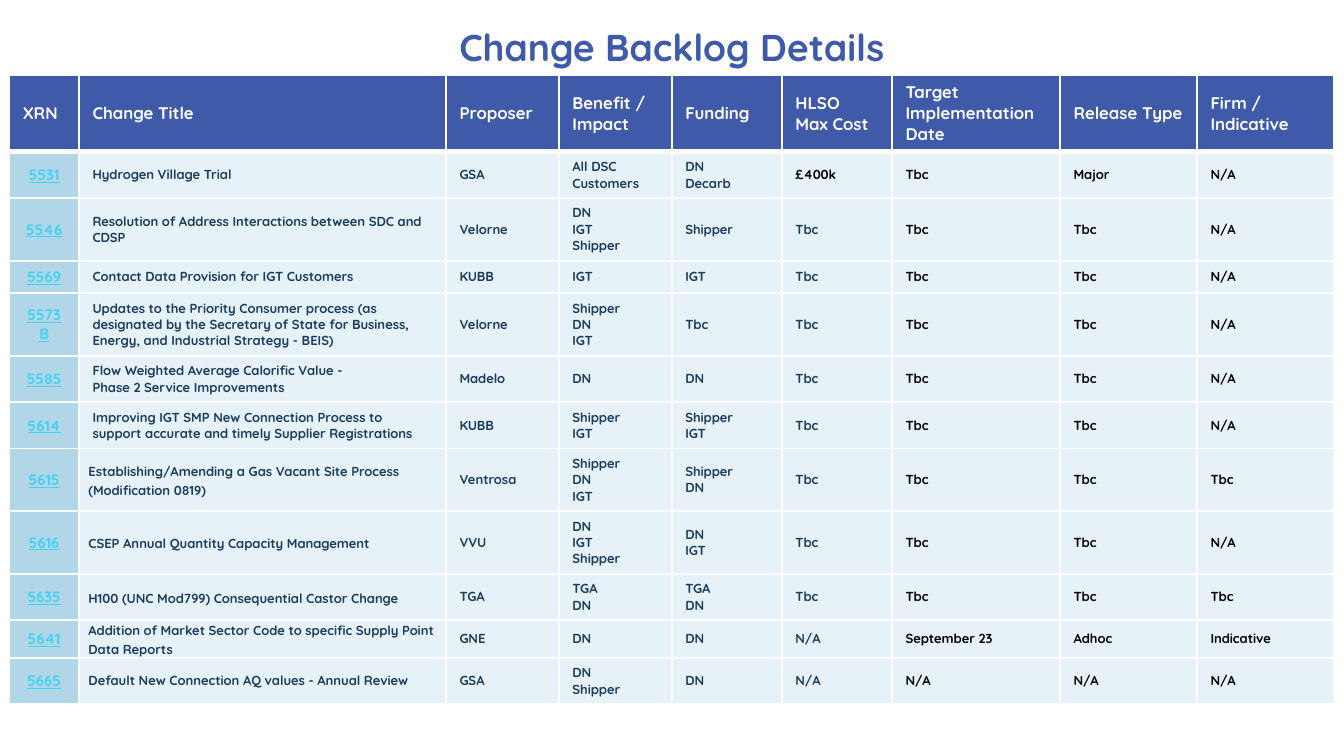
from lxml.etree import SubElement
from pptx import Presentation
from pptx.dml.color import RGBColor
from pptx.enum.text import MSO_ANCHOR, PP_ALIGN
from pptx.oxml.ns import qn
from pptx.util import Pt

FONT = "Quicksand"
HUES = {
    "blue": "3E5AA8", "navy": "1D3E61", "link": "40D1F5", "sky": "B1D6E8",
    "pale": "E6F1F8", "white": "FFFFFF", "black": "000000",
}
WIDTHS = [37.4, 196.6, 60.5, 60.5, 59, 59, 90, 73.4, 73.4]
HEIGHTS = [41, 24.7, 33.4, 17.2, 33.4, 24.7, 24.7, 33.4, 33.4, 24.7, 20.1, 24.7]
TIGHT = range(7, 12)  # rows whose change title has narrow margins
LOOSE = range(7, 11)  # rows whose change title has wider line spacing

ROWS = [
    ("XRN", "Change Title", "Proposer", "Benefit / Impact", "Funding",
     "HLSO\nMax Cost", "Target Implementation Date", "Release Type",
     "Firm / Indicative"),
    ("5531", "Hydrogen Village Trial", "GSA", "All DSC Customers",
     "DN\nDecarb", "£400k", "Tbc", "Major", "N/A"),
    ("5546", "Resolution of Address Interactions between SDC and CDSP",
     "Velorne", "DN\nIGT\nShipper", "Shipper", "Tbc", "Tbc", "Tbc", "N/A"),
    ("5569", "Contact Data Provision for IGT Customers",
     "KUBB", "IGT", "IGT", "Tbc", "Tbc", "Tbc", "N/A"),
    ("5573B", "Updates to the Priority Consumer process (as designated by the "
     "Secretary of State for Business, Energy, and Industrial Strategy - BEIS)",
     "Velorne", "Shipper\nDN\nIGT", "Tbc", "Tbc", "Tbc", "Tbc", "N/A"),
    ("5585", "Flow Weighted Average Calorific Value -\n"
     "Phase 2 Service Improvements",
     "Madelo", "DN", "DN", "Tbc", "Tbc", "Tbc", "N/A"),
    ("5614", "Improving IGT SMP New Connection Process to support accurate "
     "and timely Supplier Registrations",
     "KUBB", "Shipper\nIGT", "Shipper\nIGT", "Tbc", "Tbc", "Tbc", "N/A"),
    ("5615", "Establishing/Amending a Gas Vacant Site Process "
     "(Modification 0819)",
     "Ventrosa", "Shipper\nDN\nIGT", "Shipper\nDN", "Tbc", "Tbc", "Tbc", "Tbc"),
    ("5616", "CSEP Annual Quantity Capacity Management",
     "VVU", "DN\nIGT\nShipper", "DN\nIGT", "Tbc", "Tbc", "Tbc", "N/A"),
    ("5635", "H100 (UNC Mod799) Consequential Castor Change",
     "TGA", "TGA\nDN", "TGA\nDN", "Tbc", "Tbc", "Tbc", "Tbc"),
    ("5641", "Addition of Market Sector Code to specific Supply Point "
     "Data Reports",
     "GNE", "DN", "DN", "N/A", "September 23", "Adhoc", "Indicative"),
    ("5665", "Default New Connection AQ values - Annual Review",
     "GSA", "DN\nShipper", "DN", "N/A", "N/A", "N/A", "N/A"),
]


def tint(name):
    return RGBColor.from_string(HUES[name])


def style(frame, size, hue, align=None, line=False):
    for para in frame.paragraphs:
        para.alignment = align
        for run in para.runs:
            font = run.font
            font.name, font.size, font.bold = FONT, Pt(size), True
            font.color.rgb = tint(hue)
            if line:
                font.underline = True


def edge(cell, side, width):
    line = SubElement(cell._tc.get_or_add_tcPr(), qn("a:ln" + side),
                      w=str(Pt(width)))
    fill = SubElement(line, qn("a:solidFill"))
    SubElement(fill, qn("a:srgbClr"), val=HUES["white"])


def looks(row, col):
    """Give the fill, text colour and size of a cell."""
    if row == 0:
        return "blue", "white", 9
    if col == 0:
        return "sky", "link", 8
    dark = col > 5 or (row == 1 and col == 5)
    return "pale", "black" if dark else "navy", 7


def fill_cell(cell, row, col, text):
    back, hue, size = looks(row, col)
    # Borders come before the fill; the header has a thick lower rule
    thick = {"T": row == 1, "B": row == 0}
    for side in "LRTB":
        edge(cell, side, 3 if thick.get(side) else 1)
    cell.fill.solid()
    cell.fill.fore_color.rgb = tint(back)
    cell.vertical_anchor = MSO_ANCHOR.MIDDLE
    frame = cell.text_frame
    frame.text = text
    key = row > 0 and col == 0
    style(frame, size, hue, PP_ALIGN.CENTER if key else None, key)
    if col == 1 and row in TIGHT:
        cell.margin_left = cell.margin_right = Pt(5)
        cell.margin_top = cell.margin_bottom = Pt(0)
    if col == 1 and row in LOOSE:
        para = frame.paragraphs[0]
        para.line_spacing, para.space_after = 1.15, Pt(10)


def add_title(slide, text):
    title = slide.shapes.title
    title.left, title.top = Pt(36), Pt(10)
    title.width, title.height = Pt(648), Pt(29.5)
    frame = title.text_frame
    frame.text = text
    frame.vertical_anchor = MSO_ANCHOR.MIDDLE
    style(frame, 20, "blue", PP_ALIGN.CENTER)


def add_grid(slide):
    table = slide.shapes.add_table(
        len(ROWS), len(WIDTHS), Pt(5), Pt(40.3),
        Pt(sum(WIDTHS)), Pt(sum(HEIGHTS))).table
    table.horz_banding = False
    for col, width in zip(table.columns, WIDTHS):
        col.width = Pt(width)
    for row, height in zip(table.rows, HEIGHTS):
        row.height = Pt(height)
    for r, texts in enumerate(ROWS):
        for c, text in enumerate(texts):
            fill_cell(table.cell(r, c), r, c, text)


def main():
    deck = Presentation()
    deck.slide_width, deck.slide_height = Pt(720), Pt(405)
    slide = deck.slides.add_slide(deck.slide_layouts[5])
    add_title(slide, "Change Backlog Details")
    add_grid(slide)
    deck.save("out.pptx")


if __name__ == "__main__":
    main()
